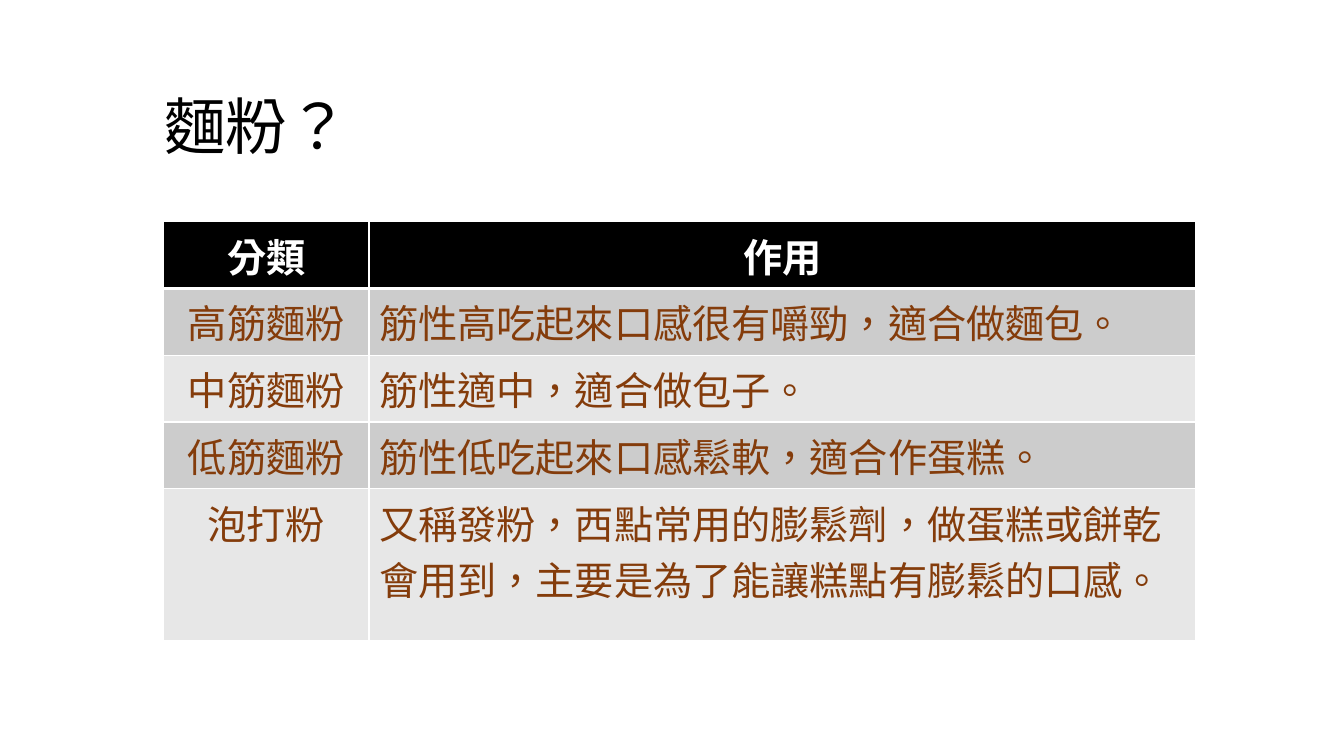
import pptx
import pptx.dml.color
import pptx.enum.lang
import pptx.enum.text
import pptx.oxml
import pptx.oxml.ns
import pptx.util

Inches = pptx.util.Inches
ALIGN = pptx.enum.text.PP_ALIGN
COLORS = {
    "black": "000000",
    "white": "FFFFFF",
    "brown": "843C0B",
    "band_dark": "CCCCCC",
    "band_light": "E7E7E7",
}
FLOURS = [
    ("分類", "作用"),
    ("高筋麵粉", "筋性高吃起來口感很有嚼勁，適合做麵包。"),
    ("中筋麵粉", "筋性適中，適合做包子。"),
    ("低筋麵粉", "筋性低吃起來口感鬆軟，適合作蛋糕。"),
    ("泡打粉", "又稱發粉，西點常用的膨鬆劑，做蛋糕或餅乾會用到，主要是為了能讓糕點有膨鬆的口感。"),
]


def rgb(name):
    return pptx.dml.color.RGBColor.from_string(COLORS[name])


def write_text(tf, text, size=28, color="black", bold=False,
               align=ALIGN.LEFT, spacing=None, font="Calibri"):
    p = tf.paragraphs[0]
    p.alignment = align
    p.line_spacing = spacing
    r = p.add_run()
    r.text = text
    r.font.name = font
    r.font.size = pptx.util.Pt(size)
    r.font.bold = bold
    r.font.color.rgb = rgb(color)
    r.font.language_id = pptx.enum.lang.MSO_LANGUAGE_ID.TRADITIONAL_CHINESE


def set_borders(cell, color, bottom=1):
    """Draw 1 pt lines round a cell, with its own width at the bottom."""
    tc_pr = cell._tc.get_or_add_tcPr()
    widths = {"lnL": 1, "lnR": 1, "lnT": 1, "lnB": bottom}
    for i, (tag, width) in enumerate(widths.items()):
        tc_pr.insert(i, pptx.oxml.parse_xml(
            f'<a:{tag} {pptx.oxml.ns.nsdecls("a")} w="{pptx.util.Pt(width)}">'
            f'<a:solidFill><a:srgbClr val="{COLORS[color]}"/></a:solidFill>'
            f'</a:{tag}>'))


class FlourSlide:
    def __init__(self, prs):
        self.s = prs.slides.add_slide(prs.slide_layouts[5])

    def title(self, text, left, top, width, height):
        sp = self.s.shapes.title
        sp.left, sp.top = Inches(left), Inches(top)
        sp.width, sp.height = Inches(width), Inches(height)
        tf = sp.text_frame
        tf.word_wrap = True
        tf.vertical_anchor = pptx.enum.text.MSO_ANCHOR.MIDDLE
        write_text(tf, text, size=44, spacing=0.9)

    def table(self, rows, left, top, col_widths, row_heights):
        """Add a table with a header row and banded body rows."""
        table = self.s.shapes.add_table(
            len(rows), len(col_widths), Inches(left), Inches(top),
            Inches(sum(col_widths)), Inches(sum(row_heights))).table
        for col, width in zip(table.columns, col_widths):
            col.width = Inches(width)
        for i, (row, height) in enumerate(zip(rows, row_heights)):
            table.rows[i].height = Inches(height)
            header = i == 0
            band = "band_dark" if i % 2 else "band_light"
            for j, text in enumerate(row):
                cell = table.cell(i, j)
                cell.fill.solid()
                cell.fill.fore_color.rgb = rgb("black" if header else band)
                set_borders(cell, "white", bottom=3 if header else 1)
                write_text(cell.text_frame, text, bold=header,
                           color="white" if header else "brown",
                           align=ALIGN.CENTER if header or j == 0 else ALIGN.LEFT)


def main():
    prs = pptx.Presentation()
    prs.slide_width, prs.slide_height = Inches(13.33), Inches(7.5)
    slide = FlourSlide(prs)
    slide.title("麵粉？", 1.53, 0.56, 10.47, 1.45)
    slide.table(FLOURS, 1.62, 2.2, [2.04, 8.2], [0.57, 0.57, 0.57, 0.61, 1.51])
    prs.save("out.pptx")


if __name__ == "__main__":
    main()
